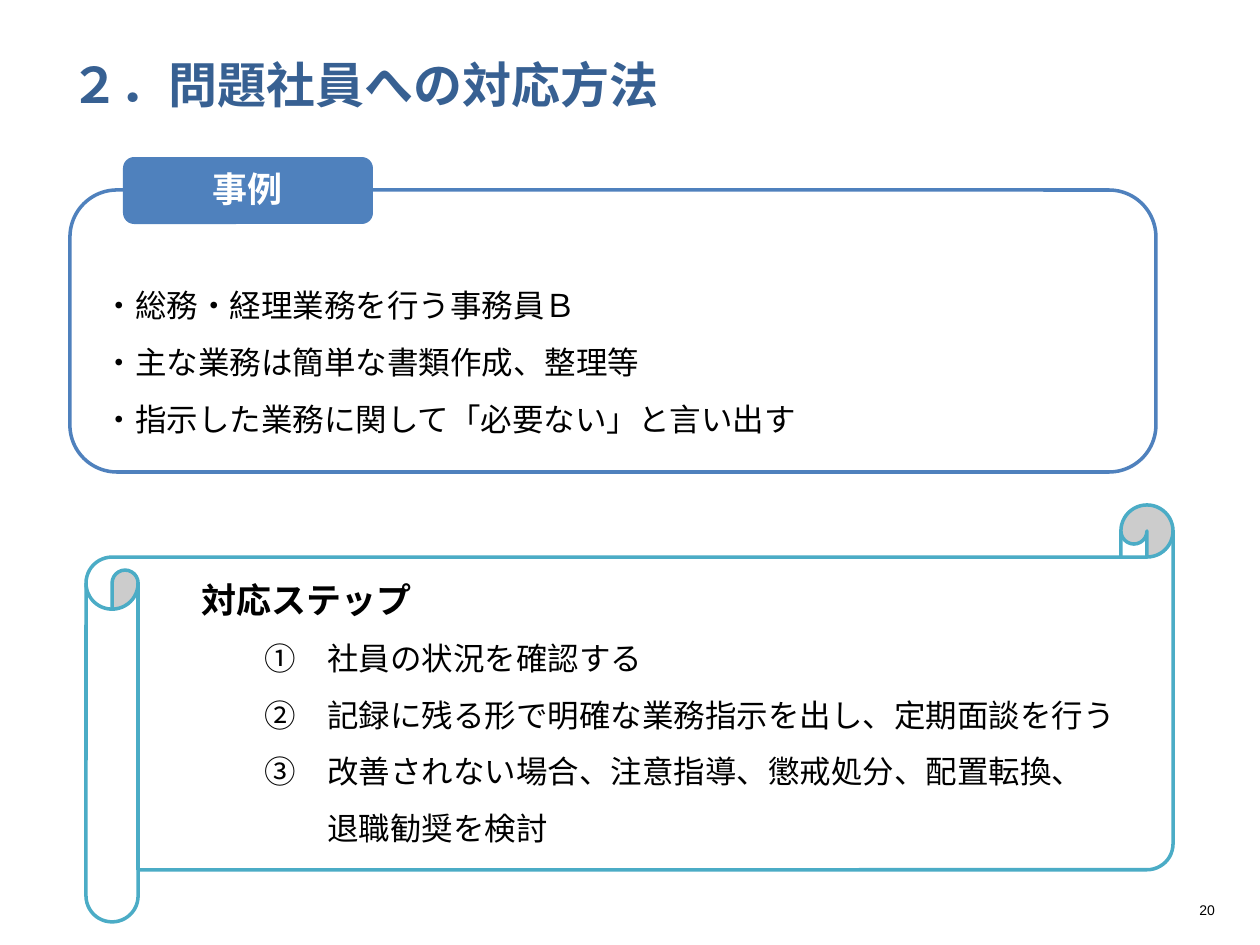
from pptx import Presentation
from pptx import util as u
from pptx.dml.color import RGBColor
from pptx.enum import shapes, text
from pptx.oxml.ns import qn

PX = 914400 / 126
COLORS = {"title": "376092", "blue": "4F81BD", "teal": "4BACC6",
          "white": "FFFFFF", "black": "000000"}
JP = "Noto Sans CJK JP"


def px(n):
    return u.Emu(round(n * PX))


def rgb(name):
    return RGBColor.from_string(COLORS[name])


def add_shape(s, kind, box, fill, line=None):
    sp = s.shapes.add_shape(kind, *map(px, box))
    sp.shadow.inherit = False
    sp.fill.solid()
    sp.fill.fore_color.rgb = rgb(fill)
    if line:
        sp.line.color.rgb = rgb(line)
        sp.line.width = u.Pt(2)
    else:
        sp.line.fill.background()
    return sp


def set_frame(sp, anchor, insets=(0, 0, 0, 0), wrap=True):
    """Insets run left, top, right, bottom."""
    tf = sp.text_frame
    tf.word_wrap = wrap
    tf.vertical_anchor = anchor
    (tf.margin_left, tf.margin_top,
     tf.margin_right, tf.margin_bottom) = map(px, insets)
    return tf


def add_text(tf, words, size=18, color="black", bold=False, font=JP,
             align=text.PP_ALIGN.LEFT, spacing=None, left=0, hang=0):
    p = tf.paragraphs[0]
    if p.runs:
        p = tf.add_paragraph()
    p.alignment = align
    if spacing:
        p.line_spacing = spacing
    pPr = p._p.get_or_add_pPr()
    pPr.set("marL", str(px(left)))
    pPr.set("indent", str(px(-hang)))
    r = p.add_run()
    r.text = words
    r.font.size = u.Pt(size)
    r.font.bold = bold
    r.font.name = font
    r.font.color.rgb = rgb(color)
    ea = r._r.get_or_add_rPr().makeelement(qn("a:ea"), {"typeface": font})
    r._r.rPr.find(qn("a:latin")).addnext(ea)


def title(s, box, words):
    sp = s.shapes.add_textbox(*map(px, box))
    tf = set_frame(sp, text.MSO_ANCHOR.BOTTOM)
    add_text(tf, words, size=28, color="title", bold=True)


def page_number(s, box, words):
    sp = s.shapes.add_textbox(*map(px, box))
    tf = set_frame(sp, text.MSO_ANCHOR.MIDDLE, wrap=False)
    add_text(tf, words, size=8, font="Arial", align=text.PP_ALIGN.RIGHT)


def case_panel(s, box, label, lines):
    """Rounded panel with a label tab over its top edge."""
    x, y, w, h = box
    rounded = shapes.MSO_SHAPE.ROUNDED_RECTANGLE
    sp = add_shape(s, rounded, box, "white", "blue")
    tf = set_frame(sp, text.MSO_ANCHOR.MIDDLE, (20, 47, 20, 4))
    for line in lines:
        add_text(tf, line, spacing=1.5)

    tab = add_shape(s, rounded, (x + 53, y - 33, 250, 67), "blue")
    tf = set_frame(tab, text.MSO_ANCHOR.MIDDLE, (20, 0, 20, 4))
    add_text(tf, label, size=20, color="white", bold=True,
             align=text.PP_ALIGN.CENTER)


def step_scroll(s, box, heading, steps, continuation):
    sp = add_shape(s, shapes.MSO_SHAPE.HORIZONTAL_SCROLL, box, "white", "teal")
    tf = set_frame(sp, text.MSO_ANCHOR.TOP)
    body = dict(align=text.PP_ALIGN.JUSTIFY, spacing=1.5)
    add_text(tf, heading, size=20, bold=True, left=72, hang=9, **body)
    for step in steps:
        add_text(tf, step, left=144, hang=18, **body)
    add_text(tf, continuation, left=189, **body)


def main():
    prs = Presentation()
    prs.slide_width, prs.slide_height = px(1260), px(945)
    s = prs.slides.add_slide(prs.slide_layouts[6])
    title(s, (71, 59, 1120, 54), "２．問題社員への対応方法")
    page_number(s, (1178, 896, 37, 28), "20")
    case_panel(s, (70, 190, 1086, 282), "事例", [
        "・総務・経理業務を行う事務員Ｂ",
        "・主な業務は簡単な書類作成、整理等",
        "・指示した業務に関して「必要ない」と言い出す",
    ])
    step_scroll(s, (86, 505, 1087, 417), "対応ステップ", [
        "①　社員の状況を確認する",
        "②　記録に残る形で明確な業務指示を出し、定期面談を行う",
        "③　改善されない場合、注意指導、懲戒処分、配置転換、",
    ], "退職勧奨を検討")
    prs.save("out.pptx")


if __name__ == "__main__":
    main()
